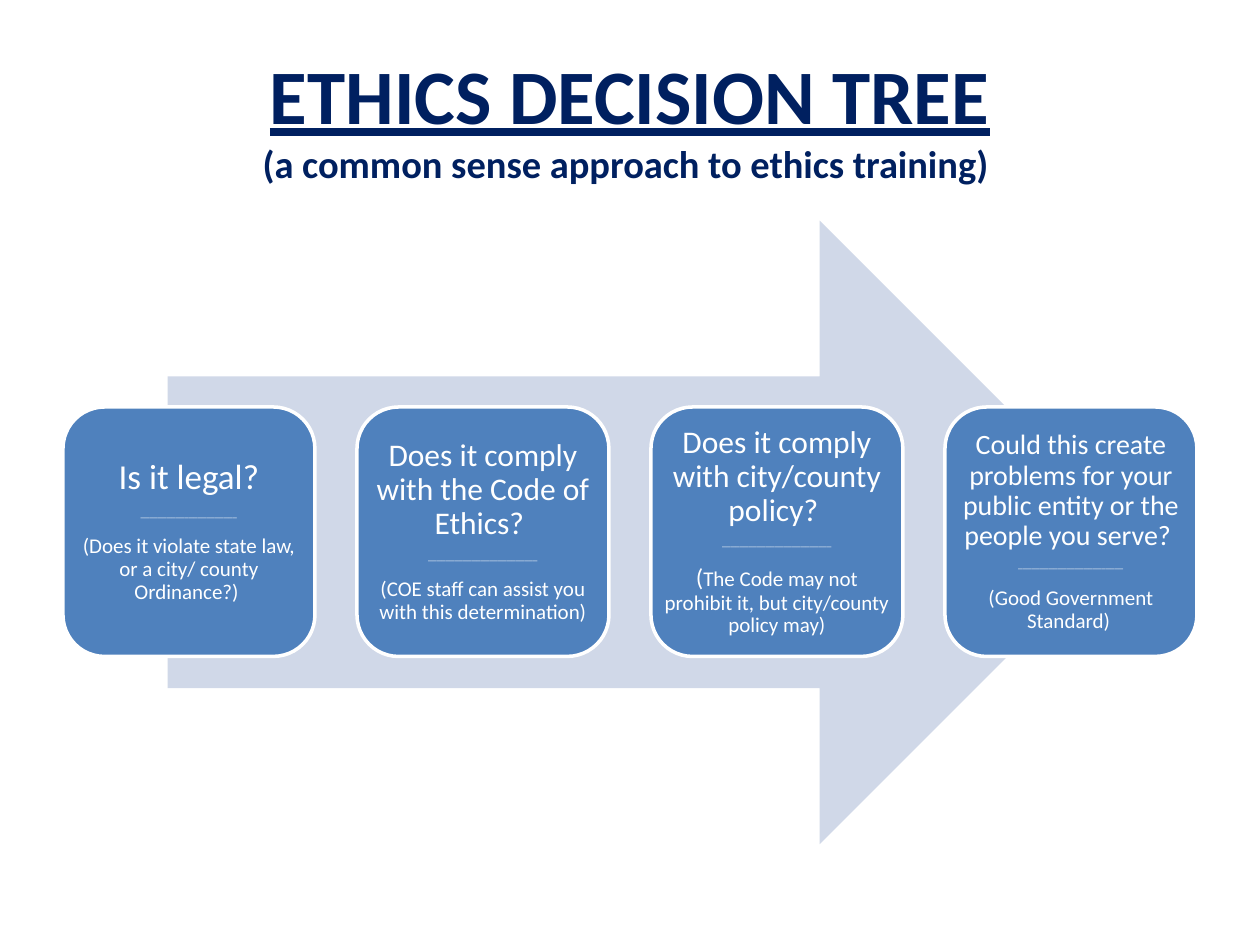
from dataclasses import dataclass

from pptx import Presentation
from pptx.dml.color import RGBColor
from pptx.enum.shapes import MSO_SHAPE as Preset
from pptx.enum.text import MSO_ANCHOR as Anchor, PP_ALIGN as Align
from pptx.util import Inches, Pt

# Content
TITLE = "ETHICS DECISION TREE"
SUBTITLE = "(a common sense approach to ethics training) "
# Each card: question, question size, underscores in the rule, [(note text, size)]
CARDS = [
    ("Is it legal?", 20, 22,
     [("(Does it violate state law, or a city/ county Ordinance?) ", 12)]),
    ("Does it comply with the Code of Ethics? ", 18, 25,
     [("(COE staff can assist you with this determination)", 12)]),
    ("Does it comply with city/county policy? ", 18, 25,
     [("(", 14),
      ("The Code may not prohibit it, but city/county policy may)", 12)]),
    ("Could this create problems for your public entity or the people you serve? ",
     16, 24, [("(Good Government Standard) ", 12)]),
]


@dataclass(frozen=True)
class Theme:
    font: str = "Calibri"
    navy: str = "002060"
    blue: str = "4F81BD"
    pale: str = "D0D8E8"
    white: str = "FFFFFF"
    title_size: int = 44
    subtitle_size: int = 22
    rule_size: int = 5
    rule_gap: float = 9.5
    line_spacing: float = 0.9
    gap_ratio: float = 0.35


THEME = Theme()

# Layout, in inches
MARGIN = 0.5
CONTENT_WIDTH = 9
CARD_WIDTH, CARD_HEIGHT, CARD_TOP = 2, 1.98, 3.23
CARD_STEP = (CONTENT_WIDTH - CARD_WIDTH) / (len(CARDS) - 1)


def add_run(paragraph, text, size, color, bold=False, underline=False):
    run = paragraph.add_run()
    run.text = text
    font = run.font
    font.name, font.size = THEME.font, Pt(size)
    font.bold, font.underline = bold, underline
    font.color.rgb = RGBColor.from_string(color)


def add_preset(slide, preset, left, top, width, height, fill, line=None):
    shape = slide.shapes.add_shape(
        preset, Inches(left), Inches(top), Inches(width), Inches(height))
    shape.shadow.inherit = False
    shape.fill.solid()
    shape.fill.fore_color.rgb = RGBColor.from_string(fill)
    if line:
        shape.line.color.rgb = RGBColor.from_string(line)
        shape.line.width = Pt(2)
    else:
        shape.line.fill.background()
    return shape


def add_title(slide):
    box = slide.shapes.add_textbox(
        Inches(MARGIN), Inches(0.3), Inches(CONTENT_WIDTH), Inches(1.25))
    frame = box.text_frame
    frame.word_wrap = True
    frame.vertical_anchor = Anchor.MIDDLE
    paragraph = frame.paragraphs[0]
    paragraph.alignment = Align.CENTER
    add_run(paragraph, TITLE, THEME.title_size, THEME.navy, bold=True, underline=True)
    paragraph.add_line_break()
    add_run(paragraph, SUBTITLE, THEME.subtitle_size, THEME.navy, bold=True)


def add_card(slide, left, question, size, rule_length, note):
    card = add_preset(slide, Preset.ROUNDED_RECTANGLE, left, CARD_TOP,
                      CARD_WIDTH, CARD_HEIGHT, THEME.blue, line=THEME.white)
    frame = card.text_frame
    frame.word_wrap = True
    frame.vertical_anchor = Anchor.MIDDLE
    frame.margin_left = frame.margin_right = 0
    frame.margin_top = frame.margin_bottom = 0

    # Question, thin rule, note: (runs, space after)
    parts = [
        ([(question, size)], size * THEME.gap_ratio),
        ([("_" * rule_length, THEME.rule_size)], THEME.rule_gap),
        (note, note[-1][1] * THEME.gap_ratio),
    ]
    for index, (runs, space_after) in enumerate(parts):
        paragraph = frame.add_paragraph() if index else frame.paragraphs[0]
        paragraph.alignment = Align.CENTER
        paragraph.line_spacing = THEME.line_spacing
        paragraph.space_after = Pt(space_after)
        for text, run_size in runs:
            add_run(paragraph, text, run_size, THEME.white)


def main():
    presentation = Presentation()
    presentation.slide_width, presentation.slide_height = Inches(10), Inches(7.5)
    slide = presentation.slides.add_slide(presentation.slide_layouts[6])

    add_title(slide)
    # Background arrow, then the row of cards on it
    add_preset(slide, Preset.RIGHT_ARROW, 1.33, 1.75, 7.65, 4.95, THEME.pale)
    for index, card in enumerate(CARDS):
        add_card(slide, MARGIN + index * CARD_STEP, *card)

    presentation.save("out.pptx")


if __name__ == "__main__":
    main()
